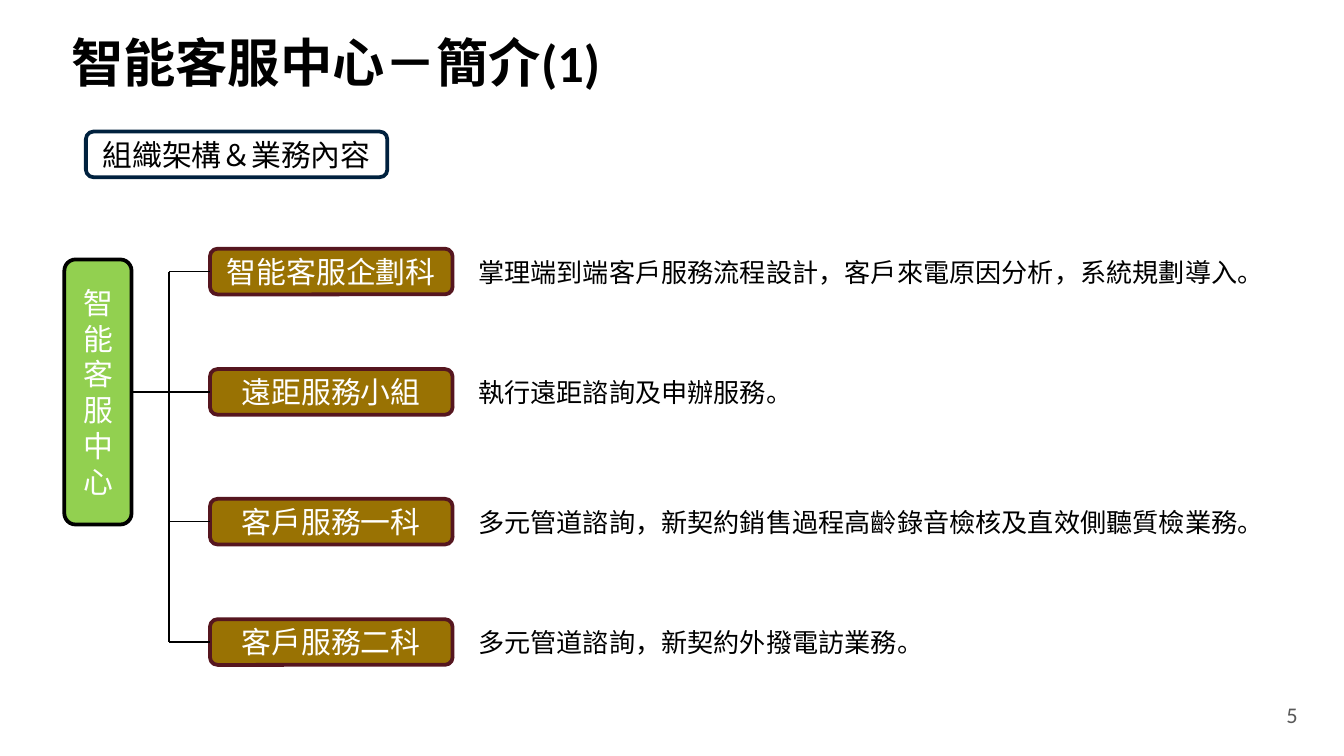
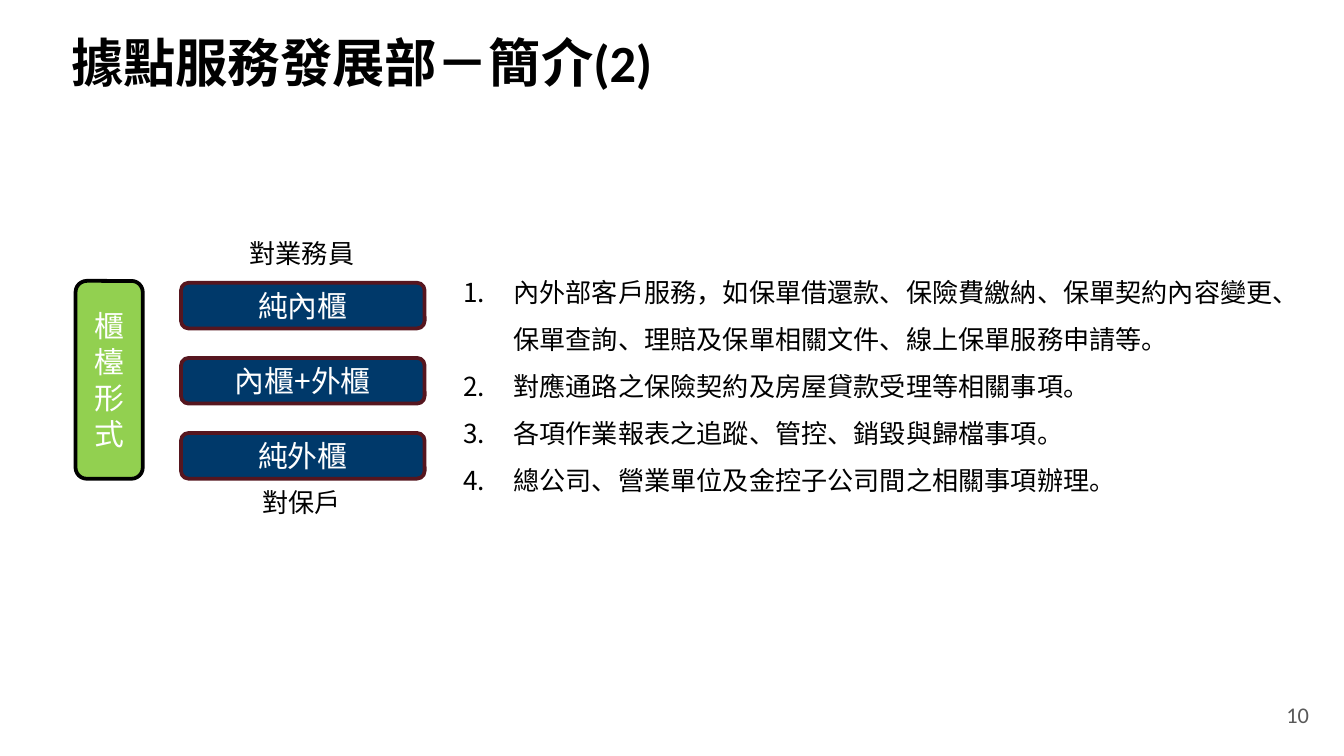
import pptx
import pptx.util
import pptx.dml.color
import pptx.enum.shapes
import pptx.enum.text
import pptx.oxml
import pptx.oxml.ns

Pt = pptx.util.Pt
RGBColor = pptx.dml.color.RGBColor
ALIGN = pptx.enum.text.PP_ALIGN
ANCHOR = pptx.enum.text.MSO_ANCHOR
AUTO_SIZE = pptx.enum.text.MSO_AUTO_SIZE

BLACK = RGBColor(0x00, 0x00, 0x00)
WHITE = RGBColor(0xFF, 0xFF, 0xFF)
GRAY = RGBColor(0x59, 0x59, 0x59)
NAVY = RGBColor(0x00, 0x21, 0x3E)
BLUE = RGBColor(0x00, 0x39, 0x6A)
GREEN = RGBColor(0x92, 0xD0, 0x50)
BROWN = RGBColor(0x99, 0x72, 0x03)
MAROON = RGBColor(0x56, 0x16, 0x1F)

HEADING_FONT = "Calibri"
BODY_FONT = "Noto Sans CJK SC"
TITLE_ONLY = 5
BOX_HEIGHT = 24.5
LEFT_SIDE, RIGHT_SIDE = 1, 3


class Deck:
    def __init__(self):
        self.presentation = pptx.Presentation()
        self.presentation.slide_width = Pt(720)
        self.presentation.slide_height = Pt(405)
        self.slide = None

    def add_slide(self, title, number):
        layout = self.presentation.slide_layouts[TITLE_ONLY]
        self.slide = self.presentation.slides.add_slide(layout)
        shape = self.slide.shapes.title
        shape.left, shape.top, shape.width, shape.height = Pt(31), Pt(16.5), Pt(657.5), Pt(33)
        self.set_text(shape, [title], 28, BLACK, font=HEADING_FONT, bold=True)
        self.text_box((682, 371.5, 38, 22.5), [str(number)], 12, GRAY, font=HEADING_FONT)

    def set_text(self, shape, lines, size, color, align=ALIGN.LEFT, anchor=ANCHOR.MIDDLE,
                 font=BODY_FONT, bold=False):
        frame = shape.text_frame
        frame.text = "\n".join(lines)
        frame.word_wrap = True
        frame.auto_size = AUTO_SIZE.NONE
        frame.vertical_anchor = anchor
        for paragraph in frame.paragraphs:
            paragraph.alignment = align
            for run in paragraph.runs:
                run.font.name = font
                run.font.size = Pt(size)
                run.font.bold = bold
                run.font.color.rgb = color
                east_asian = pptx.oxml.parse_xml(
                    f'<a:ea {pptx.oxml.ns.nsdecls("a")} typeface="{BODY_FONT}"/>')
                run.font._element.find(pptx.oxml.ns.qn("a:latin")).addnext(east_asian)

    def text_box(self, bounds, lines, size, color, **style):
        shape = self.slide.shapes.add_textbox(*map(Pt, bounds))
        self.set_text(shape, lines, size, color, **style)
        return shape

    def box(self, bounds, text, fill=None, line=None, size=16, color=WHITE, align=ALIGN.CENTER):
        """Rounded box; without fill and line it is a plain label."""
        shape = self.slide.shapes.add_shape(
            pptx.enum.shapes.MSO_SHAPE.ROUNDED_RECTANGLE, *map(Pt, bounds))
        shape.shadow.inherit = False
        if fill is None:
            shape.fill.background()
        else:
            shape.fill.solid()
            shape.fill.fore_color.rgb = fill
        if line is None:
            shape.line.fill.background()
        else:
            shape.line.color.rgb = line
            shape.line.width = Pt(2)
        self.set_text(shape, [text], size, color, align)
        return shape

    def label(self, bounds, text, align=ALIGN.CENTER):
        return self.box(bounds, text, size=14, color=BLACK, align=align)

    def connector(self, start, end, begin_shape=None, end_shape=None):
        """Line from the left side of begin_shape to the right side of end_shape."""
        line = self.slide.shapes.add_connector(
            pptx.enum.shapes.MSO_CONNECTOR.STRAIGHT, *map(Pt, (*start, *end)))
        line.line.color.rgb = BLACK
        line.line.width = Pt(0.75)
        line._element.spPr.append(
            pptx.oxml.parse_xml(f'<a:effectLst {pptx.oxml.ns.nsdecls("a")}/>'))
        if begin_shape is not None:
            line.begin_connect(begin_shape, LEFT_SIDE)
        if end_shape is not None:
            line.end_connect(end_shape, RIGHT_SIDE)

    def numbered_list(self, bounds, lines):
        shape = self.text_box(bounds, lines, 14, BLACK, anchor=ANCHOR.TOP)
        shape.text_frame.auto_size = AUTO_SIZE.SHAPE_TO_FIT_TEXT
        for paragraph in shape.text_frame.paragraphs:
            properties = paragraph._p.get_or_add_pPr()
            properties.set("marL", str(Pt(27)))
            properties.set("indent", str(-Pt(27)))
            properties.append(pptx.oxml.parse_xml(
                f'<a:buAutoNum {pptx.oxml.ns.nsdecls("a")} type="arabicPeriod"/>'))
            paragraph.line_spacing = 1.5


def add_organization_slide(deck):
    deck.add_slide("智能客服中心－簡介(1)", 5)
    deck.box((46, 70.5, 161.5, BOX_HEIGHT), "組織架構＆業務內容", WHITE, NAVY, color=BLACK)
    center = deck.box((34.5, 139, 36, 142), "智能客服中心", GREEN, BLACK)

    units = [
        (145.5, "智能客服企劃科", "掌理端到端客戶服務流程設計，客戶來電原因分析，系統規劃導入。"),
        (210, "遠距服務小組", "執行遠距諮詢及申辦服務。"),
        (279.5, "客戶服務一科", "多元管道諮詢，新契約銷售過程高齡錄音檢核及直效側聽質檢業務。"),
        (344, "客戶服務二科", "多元管道諮詢，新契約外撥電訪業務。"),
    ]
    unit_left, trunk_x = 112.5, 90.5
    deck.connector((trunk_x, units[0][0]), (trunk_x, units[-1][0]))
    for middle, name, duty in units:
        unit = deck.box((unit_left, middle - BOX_HEIGHT / 2, 130, BOX_HEIGHT),
                        name, BROWN, MAROON)
        deck.label((247, middle - 21.5, 431.5, 43), duty, ALIGN.LEFT)
        deck.connector((unit_left, middle), (trunk_x, middle), unit,
                       center if middle == 210 else None)


def add_counter_slide(deck):
    deck.add_slide("據點服務發展部－簡介(2)", 10)
    deck.box((40.5, 150.5, 36, 106), "櫃檯形式", GREEN, BLACK)
    for row, name in enumerate(["純內櫃", "內櫃+外櫃", "純外櫃"]):
        deck.box((97, 151.5 + 40.25 * row, 130.5, BOX_HEIGHT), name, BLUE, MAROON)
    for top, audience in [(123.5, "對業務員"), (257, "對保戶")]:
        deck.label((116.5, top, 90.5, BOX_HEIGHT), audience)
    deck.numbered_list((241, 136, 454.5, 131), [
        "內外部客戶服務，如保單借還款、保險費繳納、保單契約內容變更、"
        "保單查詢、理賠及保單相關文件、線上保單服務申請等。",
        "對應通路之保險契約及房屋貸款受理等相關事項。",
        "各項作業報表之追蹤、管控、銷毀與歸檔事項。",
        "總公司、營業單位及金控子公司間之相關事項辦理。",
    ])


def main():
    deck = Deck()
    add_organization_slide(deck)
    add_counter_slide(deck)
    deck.presentation.save("out.pptx")


if __name__ == "__main__":
    main()
